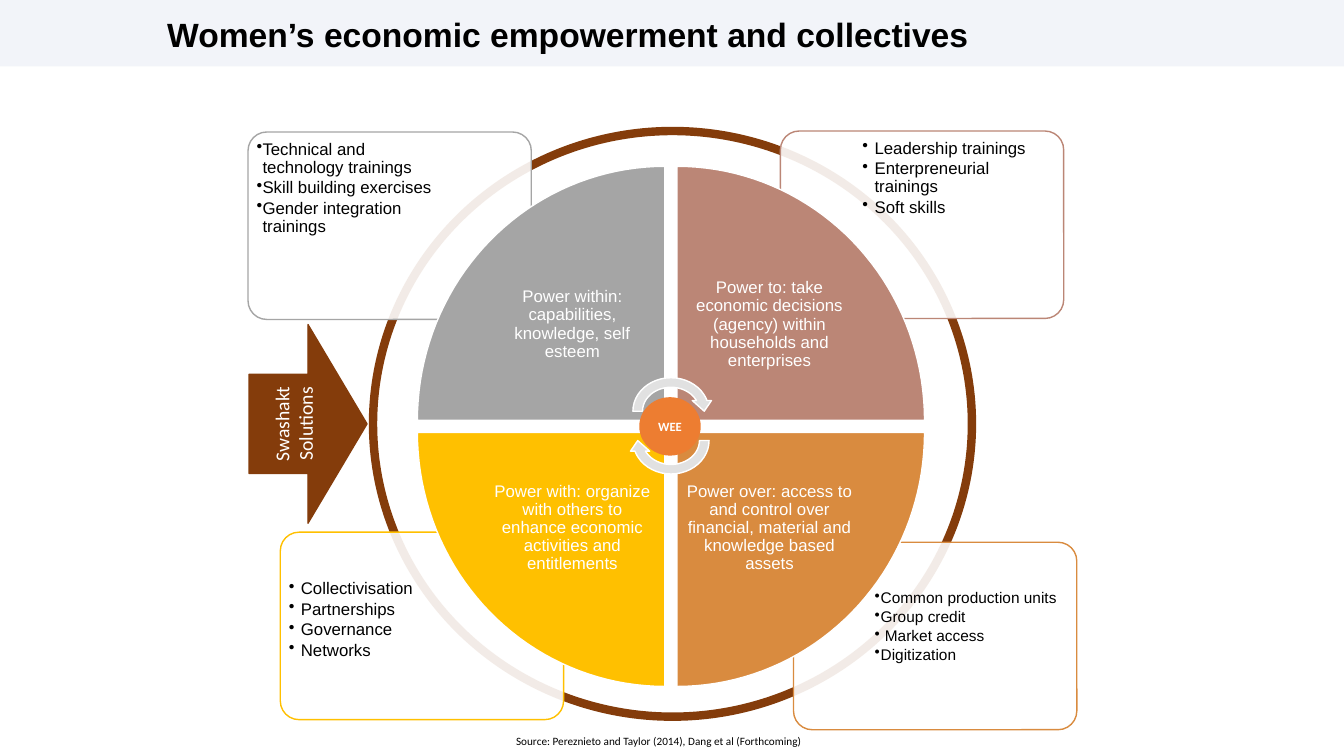
from dataclasses import dataclass
from math import cos, pi, sin

from lxml import etree
from pptx import Presentation
from pptx.dml.color import RGBColor
from pptx.enum.shapes import MSO_SHAPE
from pptx.enum.text import MSO_ANCHOR, MSO_AUTO_SIZE, PP_ALIGN
from pptx.oxml.ns import qn
from pptx.util import Inches, Pt

RECTANGLE, ELLIPSE = MSO_SHAPE.RECTANGLE, MSO_SHAPE.OVAL
ROUNDED, DOWN_ARROW = MSO_SHAPE.ROUNDED_RECTANGLE, MSO_SHAPE.DOWN_ARROW
CIRCULAR_ARROW = MSO_SHAPE.CIRCULAR_ARROW
TOP, MIDDLE = MSO_ANCHOR.TOP, MSO_ANCHOR.MIDDLE
LEFT, CENTER = PP_ALIGN.LEFT, PP_ALIGN.CENTER
GROW = MSO_AUTO_SIZE.SHAPE_TO_FIT_TEXT


@dataclass(frozen=True)
class Theme:
    """Colours, fonts and type sizes of the slide."""
    band: str = "F2F4F9"
    white: str = "FFFFFF"
    black: str = "000000"
    brown: str = "843C0B"
    grey: str = "A5A5A5"
    rose: str = "BB8676"
    amber: str = "D98B3F"
    yellow: str = "FFC000"
    cycle: str = "E1E1E1"
    hub: str = "ED7D31"
    sans: str = "Arial"
    label: str = "Calibri"
    title_size: int = 24
    arrow_size: int = 14
    body_size: int = 12
    small_size: int = 11
    hub_size: int = 9
    source_size: int = 8


THEME = Theme()
DEFAULT_INSETS = (0.1, 0.05, 0.1, 0.05)


def paint(shape, fill=None, line=None, width=1):
    """Give a shape its fill and outline, without shadow."""
    shape.shadow.inherit = False
    for part, colour in ((shape.fill, fill), (shape.line.fill, line)):
        if colour:
            part.solid()
            part.fore_color.rgb = RGBColor.from_string(colour)
        else:
            part.background()
    if line:
        shape.line.width = Pt(width)
    return shape


def add_preset(page, kind, box, **look):
    """Add a painted preset shape in a box given in inches."""
    return paint(page.shapes.add_shape(kind, *map(Inches, box)), **look)


def write(shape, lines, size, color, font=THEME.sans, bold=False, align=LEFT,
          anchor=TOP, insets=DEFAULT_INSETS, spacing=1.0, hang=0):
    """Write paragraphs in a shape, bulleted when a hanging indent is given."""
    frame = shape.text_frame
    sides = ("margin_left", "margin_top", "margin_right", "margin_bottom")
    layout = dict(zip(sides, map(Inches, insets)), word_wrap=True, vertical_anchor=anchor)
    for name, value in layout.items():
        setattr(frame, name, value)
    for index, line in enumerate(lines):
        para = frame.add_paragraph() if index else frame.paragraphs[0]
        form = {"alignment": align, "line_spacing": spacing}
        if hang:
            form.update(level=1, space_after=Pt(0.15 * size))
        for name, value in form.items():
            setattr(para, name, value)
        if hang:
            properties = para._p.get_or_add_pPr()
            properties.set("marL", str(Inches(hang)))
            properties.set("indent", str(-Inches(hang)))
            etree.SubElement(properties, qn("a:buChar")).set("char", "•")
        span = para.add_run()
        span.text = line
        for name, value in {"name": font, "size": Pt(size), "bold": bold}.items():
            setattr(span.font, name, value)
        span.font.color.rgb = RGBColor.from_string(color)


def add_header(page, box):
    """Draw the title band and the title."""
    left, top, width, height = box
    add_preset(page, RECTANGLE, box, fill=THEME.band)
    title = page.shapes.add_textbox(
        *map(Inches, (left + 1.56, top + 0.15, width - 1.88, height - 0.24)))
    write(title, ["Women’s economic empowerment and collectives"], THEME.title_size,
          THEME.black, bold=True, anchor=MIDDLE, spacing=0.9)


def add_solutions_arrow(page, box):
    """Draw the arrow that points right at the ring."""
    arrow = add_preset(page, DOWN_ARROW, box, fill=THEME.brown, line=THEME.brown)
    arrow.rotation = 270
    write(arrow, ["Swashakt Solutions"], THEME.arrow_size, THEME.white,
          font=THEME.label, align=CENTER, anchor=MIDDLE)


def add_card(page, box, color, lines, insets, hang, size=THEME.body_size):
    """Draw a rounded card with bulleted lines."""
    card = add_preset(page, ROUNDED, box, fill=THEME.white, line=color)
    card.adjustments[0] = 0.1
    shade = card.fill._xPr.find(qn("a:solidFill"))[0]
    etree.SubElement(shade, qn("a:alpha")).set("val", "90000")
    write(card, lines, size, THEME.black, insets=insets, spacing=0.9, hang=hang)


def add_quadrant(page, wheel, side, level, color, text, gap=0.12, steps=40):
    """Draw one quarter of the wheel; side and level are -1 or 1."""
    left, top, width, height = wheel
    radius_x, radius_y = (width - gap) / 2, (height - gap) / 2
    corner_x = left + width / 2 + side * gap / 2
    corner_y = top + height / 2 + level * gap / 2
    angles = [pi / 2 * step / steps for step in range(steps + 1)]
    arc = [(Inches(corner_x + side * radius_x * cos(angle)),
            Inches(corner_y + level * radius_y * sin(angle))) for angle in angles]
    builder = page.shapes.build_freeform(Inches(corner_x), Inches(corner_y))
    builder.add_line_segments(arc, close=True)
    quarter = paint(builder.convert_to_shape(), fill=color, line=THEME.white)
    near, far = 0.09, 0.71
    insets = (far if side < 0 else near, far if level < 0 else near,
              near if side < 0 else far, near if level < 0 else far)
    write(quarter, [text], THEME.body_size, THEME.white, align=CENTER,
          anchor=MIDDLE, insets=insets, spacing=0.9)


def add_hub(page, box):
    """Draw the two turning arrows and the disc between them."""
    left, top, width, height = box
    arrow_height = 0.76
    for offset, turn in ((0, 0), (height - arrow_height, 180)):
        arrow = add_preset(page, CIRCULAR_ARROW, (left, top + offset, width, arrow_height),
                           fill=THEME.cycle, line=THEME.white)
        arrow.rotation = turn
    disc = add_preset(page, ELLIPSE, (left + 0.11, top + 0.24, 0.61, 0.58), fill=THEME.hub)
    write(disc, ["WEE"], THEME.hub_size, THEME.white, font=THEME.label, bold=True,
          align=CENTER, anchor=MIDDLE, insets=(0, 0, 0, 0))


def add_source(page, box):
    """Write the source line."""
    note = page.shapes.add_textbox(*map(Inches, box))
    write(note, ["Source: Pereznieto and Taylor (2014), Dang et al (Forthcoming)"],
          THEME.source_size, THEME.black, font=THEME.label)
    note.text_frame.auto_size = GROW


def main():
    """Build and save the slide."""
    deck = Presentation()
    deck.slide_width, deck.slide_height = Inches(13.33), Inches(7.5)
    page = deck.slides.add_slide(deck.slide_layouts[6])
    add_header(page, (0, 0, 13.33, 0.66))
    add_preset(page, ELLIPSE, (3.7, 1.3, 5.94, 5.81), line=THEME.brown, width=6)
    add_solutions_arrow(page, (2.07, 3.62, 1.97, 1.17))

    card_size = (2.81, 1.86)
    add_card(page, (7.87, 5.38, *card_size), THEME.amber,
             ["Common production units", "Group credit", " Market access", "Digitization"],
             (0.75, 0.42, 0.03, 0.03), 0.06, THEME.small_size)
    add_card(page, (2.78, 5.28, *card_size), THEME.yellow,
             ["Collectivisation", "Partnerships", "Governance", "Networks"],
             (0.03, 0.42, 0.76, 0.03), 0.12)
    add_card(page, (7.74, 1.3, *card_size), THEME.rose,
             ["Leadership trainings", "Enterpreneurial trainings", "Soft skills"],
             (0.76, 0.03, 0.03, 0.42), 0.12)
    add_card(page, (2.46, 1.31, *card_size), THEME.grey,
             ["Technical and technology trainings", "Skill building exercises",
              "Gender integration trainings"],
             (0.03, 0.03, 0.75, 0.42), 0.06)

    powers = (
        (-1, -1, THEME.grey, "Power within: capabilities, knowledge, self esteem"),
        (1, -1, THEME.rose, "Power to: take economic decisions (agency) within "
                            "households and enterprises"),
        (1, 1, THEME.amber, "Power over: access to and control over financial, "
                            "material and knowledge based assets"),
        (-1, 1, THEME.yellow, "Power with: organize with others to enhance economic "
                              "activities and entitlements"),
    )
    for power in powers:
        add_quadrant(page, (4.14, 1.65, 5.03, 5.16), *power)
    add_hub(page, (6.23, 3.7, 0.85, 1.05))
    add_source(page, (5.02, 7.24, 4.26, 0.24))
    deck.save("out.pptx")


if __name__ == "__main__":
    main()
